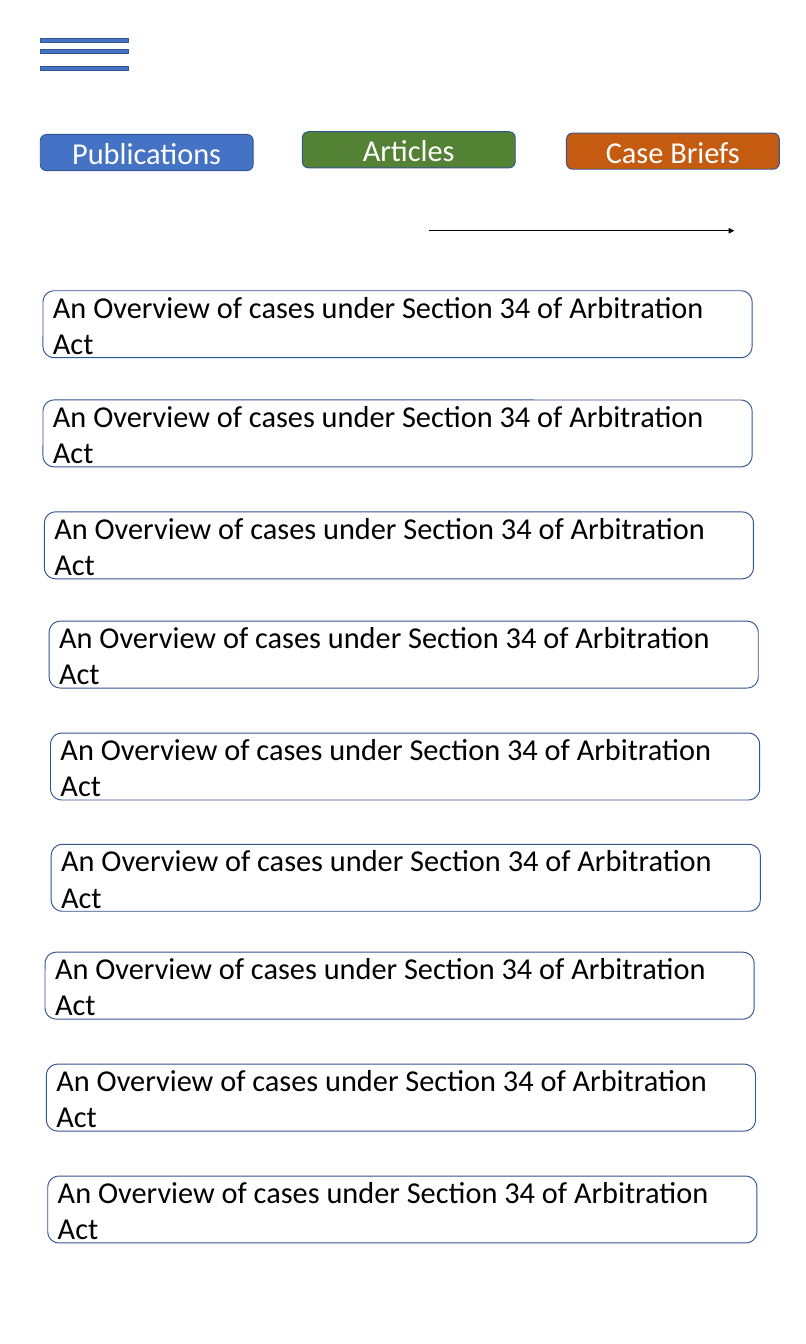
from lxml.etree import SubElement
from pptx import Presentation
from pptx.dml.color import RGBColor
from pptx.enum.shapes import MSO_CONNECTOR, MSO_SHAPE
from pptx.enum.text import MSO_ANCHOR, PP_ALIGN
from pptx.oxml.ns import qn
from pptx.util import Inches, Pt

BLUE = RGBColor(0x44, 0x72, 0xC4)
GREEN = RGBColor(0x54, 0x82, 0x35)
ORANGE = RGBColor(0xC5, 0x5A, 0x11)
OUTLINE = RGBColor(0x32, 0x54, 0x91)
WHITE = RGBColor(0xFF, 0xFF, 0xFF)
BLACK = RGBColor(0, 0, 0)

WIDTH, HEIGHT = 11.81, 19.69
MARGIN = 0.59
TABS = [("Publications", BLUE, 0, 0.04), ("Articles", GREEN, 3.84, 0),
        ("Case Briefs", ORANGE, 7.71, 0.02)]
TITLE = "An Overview of cases under Section 34 of Arbitration Act"
# Left and top of each entry, measured from the corner of the list
ENTRIES = [(0, 0), (0, 1.6), (0.02, 3.24), (0.09, 4.84), (0.11, 6.48),
           (0.12, 8.11), (0.03, 9.69), (0.05, 11.33), (0.07, 12.97)]


def add_box(slide, kind, left, top, width, height, fill=None):
    sp = slide.shapes.add_shape(kind, Inches(left), Inches(top),
                                Inches(width), Inches(height))
    sp.shadow.inherit = False
    if fill is None:
        sp.fill.background()
    else:
        sp.fill.solid()
        sp.fill.fore_color.rgb = fill
    sp.line.color.rgb = OUTLINE
    sp.line.width = Pt(1)
    return sp


def set_label(sp, text, color, align):
    tf = sp.text_frame
    tf.word_wrap = True
    tf.vertical_anchor = MSO_ANCHOR.MIDDLE
    p = tf.paragraphs[0]
    p.text = text
    p.alignment = align
    font = p.runs[0].font
    font.name = "Calibri"
    font.size = Pt(32)
    font.color.rgb = color


def add_menu_icon(slide, left, top, width):
    for offset in (0, 0.17, 0.42):
        add_box(slide, MSO_SHAPE.RECTANGLE, left, top + offset, width, 0.06, BLUE)


def add_tabs(slide, left, top, width, height):
    for text, fill, dx, dy in TABS:
        sp = add_box(slide, MSO_SHAPE.ROUNDED_RECTANGLE, left + dx, top + dy,
                     width, height, fill)
        set_label(sp, text, WHITE, PP_ALIGN.CENTER)


def add_arrow(slide, left, right, y):
    line = slide.shapes.add_connector(MSO_CONNECTOR.STRAIGHT, Inches(left),
                                      Inches(y), Inches(right), Inches(y))
    line.line.color.rgb = BLACK
    line.line.width = Pt(0.5)
    SubElement(line.line._get_or_add_ln(), qn("a:tailEnd"), type="triangle")
    SubElement(line._element.spPr, qn("a:effectLst"))


def add_entries(slide, left, top, width, height):
    for dx, dy in ENTRIES:
        sp = add_box(slide, MSO_SHAPE.ROUNDED_RECTANGLE, left + dx, top + dy,
                     width, height)
        set_label(sp, TITLE, BLACK, PP_ALIGN.LEFT)


def main():
    prs = Presentation()
    prs.slide_width, prs.slide_height = Inches(WIDTH), Inches(HEIGHT)
    slide = prs.slides.add_slide(prs.slide_layouts[6])
    add_tabs(slide, MARGIN, 1.93, 3.12, 0.53)
    add_arrow(slide, 6.29, 10.76, 3.38)
    add_entries(slide, 0.63, 4.26, 10.39, 0.98)
    add_menu_icon(slide, MARGIN, 0.56, 1.29)
    prs.save("out.pptx")


if __name__ == "__main__":
    main()
